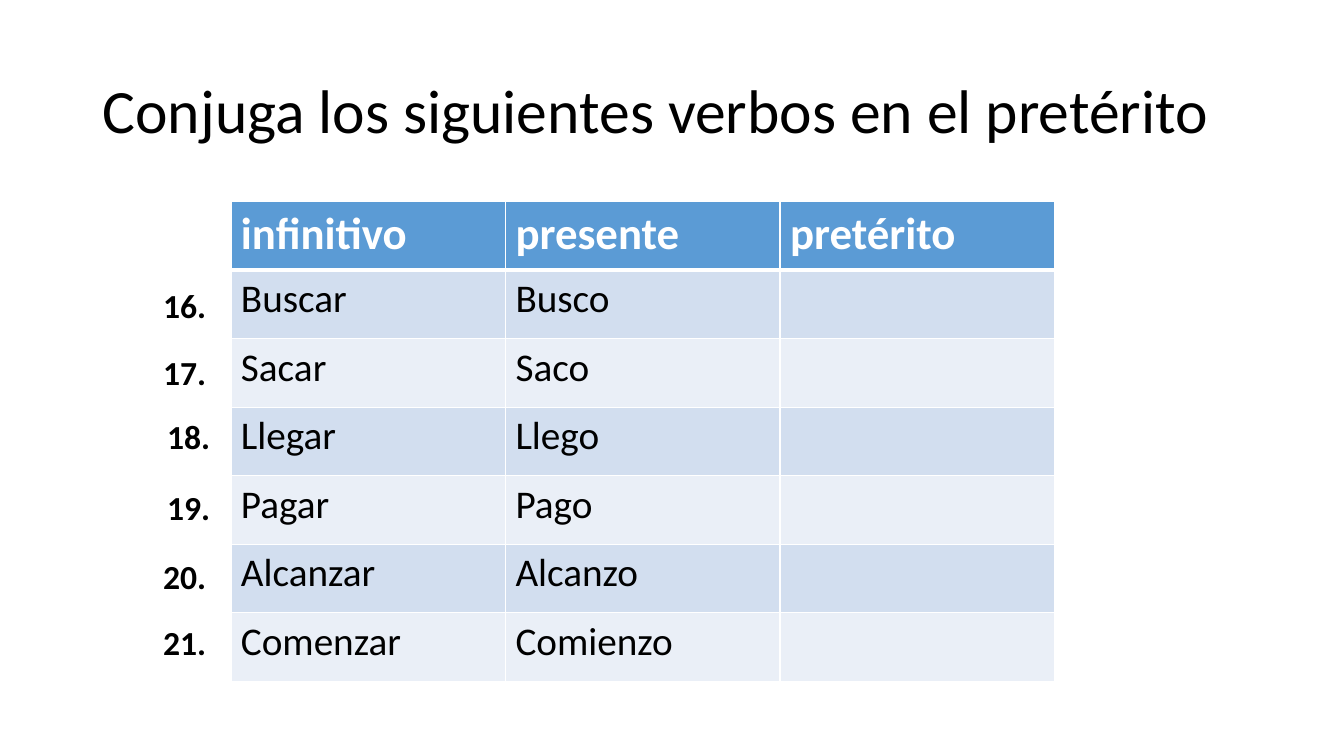
from lxml.etree import SubElement
from pptx import Presentation
from pptx.dml.color import RGBColor
from pptx.enum.text import MSO_ANCHOR
from pptx.oxml.ns import qn
from pptx.util import Inches, Pt

HEADERS = ["infinitivo", "presente", "pretérito"]
VERBS = [
    ("Buscar", "Busco"),
    ("Sacar", "Saco"),
    ("Llegar", "Llego"),
    ("Pagar", "Pago"),
    ("Alcanzar", "Alcanzo"),
    ("Comenzar", "Comienzo"),
]
FIRST_NUMBER = 16
NUMBER_SPOTS = [(1.52, 2.78), (1.52, 3.44), (1.56, 4.08),
                (1.56, 4.78), (1.52, 5.47), (1.52, 6.12)]
HEADER_FILL = "5B9BD5"
BAND_FILLS = ["D2DEEF", "EAEFF7"]
WHITE = "FFFFFF"


def rgb(value):
    return RGBColor.from_string(value)


def write(tf, text, size, color="000000", bold=False, spacing=None):
    p = tf.paragraphs[0]
    p.line_spacing = spacing
    r = p.add_run()
    r.text = text
    r.font.name = "Calibri"
    r.font.size = Pt(size)
    r.font.bold = bold
    r.font.color.rgb = rgb(color)


def add_text(slide, box, text, size, anchor=MSO_ANCHOR.TOP, **style):
    tf = slide.shapes.add_textbox(*map(Inches, box)).text_frame
    tf.word_wrap = True
    tf.vertical_anchor = anchor
    write(tf, text, size, **style)


def add_borders(cell, top=1, bottom=1):
    """Draw white cell borders; must run before the cell is filled."""
    tc_pr = cell._tc.get_or_add_tcPr()
    for side, width in (("L", 1), ("R", 1), ("T", top), ("B", bottom)):
        ln = SubElement(tc_pr, qn(f"a:ln{side}"), w=str(Pt(width)))
        fill = SubElement(ln, qn("a:solidFill"))
        SubElement(fill, qn("a:srgbClr"), val=WHITE)


def add_verb_table(slide, box):
    rows = [HEADERS] + [[*verb, ""] for verb in VERBS]
    frame = slide.shapes.add_table(len(rows), len(HEADERS), *map(Inches, box))
    table = frame.table
    for row in table.rows:
        row.height = Inches(box[3] / len(rows))
    for i, words in enumerate(rows):
        header = i == 0
        for j, word in enumerate(words):
            cell = table.cell(i, j)
            add_borders(cell, top=3 if i == 1 else 1, bottom=3 if header else 1)
            cell.fill.solid()
            cell.fill.fore_color.rgb = rgb(
                HEADER_FILL if header else BAND_FILLS[(i - 1) % 2])
            if header:
                write(cell.text_frame, word, 32, color=WHITE, bold=True)
            elif word:
                write(cell.text_frame, word, 28)


def add_numbers(slide, spots, first):
    for number, (left, top) in enumerate(spots, first):
        add_text(slide, (left, top, 0.91, 0.5), f"{number}.", 24, bold=True)


def main():
    prs = Presentation()
    prs.slide_width, prs.slide_height = Inches(13.33), Inches(7.5)
    slide = prs.slides.add_slide(prs.slide_layouts[6])
    add_verb_table(slide, (2.29, 2, 8.17, 4.76))
    add_text(slide, (0.92, 0.4, 11.5, 1.45),
             "Conjuga los siguientes verbos en el pretérito", 44,
             anchor=MSO_ANCHOR.MIDDLE, spacing=0.9)
    add_numbers(slide, NUMBER_SPOTS, FIRST_NUMBER)
    prs.save("out.pptx")


if __name__ == "__main__":
    main()
